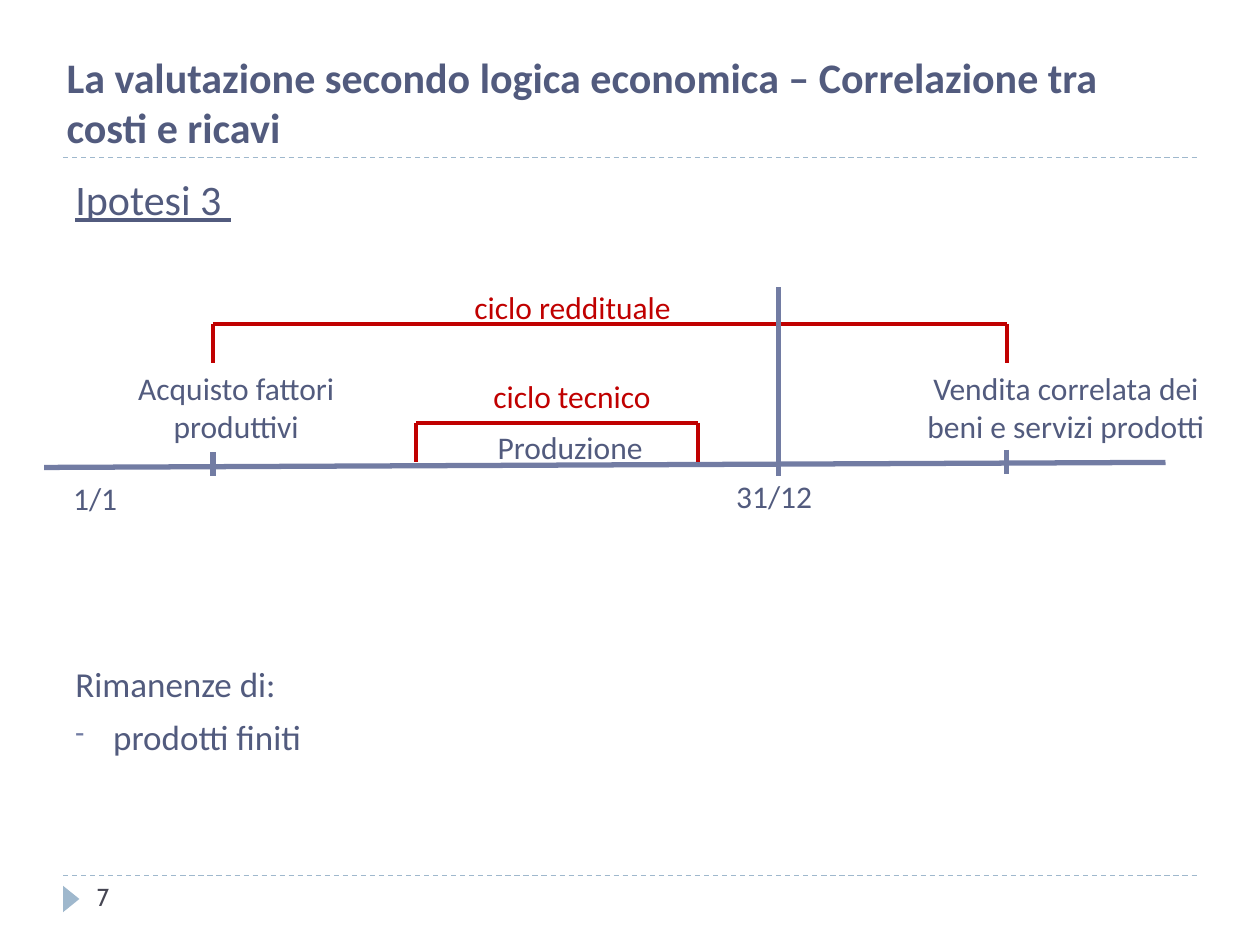
from lxml import etree
from pptx import Presentation
from pptx import util as u
from pptx.dml.color import RGBColor
from pptx.enum import dml, shapes, text
from pptx.oxml.ns import qn

INK, AXIS, CYCLE, PALE, DARK = "525B7E", "727CA3", "C00000", "9FB8CD", "464653"


def color(value):
    return RGBColor.from_string(value)


def set_all(target, values):
    for name, value in values.items():
        setattr(target, name, value)


class SlideBuilder:
    columns, rows = 100, 75
    font = "Calibri"

    def __init__(self, presentation):
        self.slide = presentation.slides.add_slide(presentation.slide_layouts[6])
        self.column = presentation.slide_width / self.columns
        self.row = presentation.slide_height / self.rows

    def place(self, x, y):
        return u.Emu(round(x * self.column)), u.Emu(round(y * self.row))

    def line(self, start, end, stroke, width, dash=None):
        connector = self.slide.shapes.add_connector(
            shapes.MSO_CONNECTOR.STRAIGHT, *self.place(*start), *self.place(*end))
        connector.line.color.rgb = color(stroke)
        set_all(connector.line, {"width": u.Pt(width), "dash_style": dash})
        etree.SubElement(connector._element.spPr, qn("a:effectLst"))

    def bracket(self, left, right, top, bottom):
        for start, end in (((left, top), (right, top)),
                           ((left, top), (left, bottom)),
                           ((right, top), (right, bottom))):
            self.line(start, end, CYCLE, 2.5)

    def triangle(self, x, y, width, height, fill):
        shape = self.slide.shapes.add_shape(
            shapes.MSO_SHAPE.ISOSCELES_TRIANGLE,
            *self.place(x, y), *self.place(width, height))
        shape.rotation = 90
        shape.shadow.inherit = False
        shape.fill.solid()
        shape.fill.fore_color.rgb = color(fill)
        shape.line.fill.background()

    def text(self, x, y, width, height, lines, size=18, ink=INK,
             align=text.PP_ALIGN.LEFT, **style):
        box = self.slide.shapes.add_textbox(
            *self.place(x, y), *self.place(width, height))
        frame = box.text_frame
        frame.word_wrap = True
        values = {"name": self.font, "size": u.Pt(size), **style}
        for index, words in enumerate(lines):
            paragraph = frame.add_paragraph() if index else frame.paragraphs[0]
            set_all(paragraph, {"alignment": align, "space_before": u.Pt(6 if index else 0)})
            run = paragraph.add_run()
            run.text = words
            set_all(run.font, values)
            run.font.color.rgb = color(ink)
        return frame

    def label(self, x, y, width, words, ink=INK, height=4):
        self.text(x, y, width, height, [words], ink=ink, align=text.PP_ALIGN.CENTER)

    def bullet(self, paragraph, mark, ink, percent):
        properties = paragraph._p.get_or_add_pPr()
        indent = u.Inches(0.3)
        properties.set("marL", str(indent))
        properties.set("indent", str(-indent))
        tint = etree.SubElement(properties, qn("a:buClr"))
        etree.SubElement(tint, qn("a:srgbClr"), val=ink)
        etree.SubElement(properties, qn("a:buSzPct"), val=str(percent * 1000))
        etree.SubElement(properties, qn("a:buChar"), char=mark)


def main():
    presentation = Presentation()
    set_all(presentation, {"slide_width": u.Inches(10), "slide_height": u.Inches(7.5)})
    page = SlideBuilder(presentation)

    for y in (69.5, 12.5):
        page.line((5, y), (95, y), PALE, 0.75, dml.MSO_LINE.DASH)
    page.triangle(4.6, 70.7, 2.1, 1.3, PALE)
    page.text(4.3, 3.6, 89.1, 9.1,
              ["La valutazione secondo logica economica – Correlazione tra costi e ricavi"],
              size=24, bold=True)
    page.text(5, 13.3, 90.7, 5, ["Ipotesi 3 "], size=24, underline=True)
    stock = page.text(5, 52.1, 90.7, 9, ["Rimanenze di:", "prodotti finiti"], size=20)
    page.bullet(stock.paragraphs[1], "-", AXIS, 76)

    purchase, sale, year_end = 16.9, 79.9, 61.8
    page.line((3.5, 37.1), (92.5, 36.7), AXIS, 3)
    page.label(4, 37.5, 7.1, "1/1")
    page.label(57.1, 37.4, 8.7, "31/12")
    page.label(8.5, 28.8, 20.5, "Acquisto fattori produttivi", height=7.1)
    page.label(72, 28.8, 25.2, "Vendita correlata dei beni e servizi prodotti", height=7.1)
    page.bracket(purchase, sale, 25.7, 28.8)
    page.label(23.2, 22.4, 44.5, "ciclo reddituale", CYCLE)
    page.label(35, 33.5, 20.5, "Produzione")
    page.bracket(33, 55.4, 33.55, 36.7)
    page.label(26.4, 29.4, 38, "ciclo tecnico", CYCLE)
    for x, top, bottom in ((purchase, 35.9, 37.8), (sale, 35.7, 37.6), (year_end, 22.8, 37.8)):
        page.line((x, top), (x, bottom), AXIS, 3)
    page.text(6.7, 69.5, 21.7, 4, ["7"], size=14, ink=DARK, name="Cabin")

    presentation.save("out.pptx")


if __name__ == "__main__":
    main()
